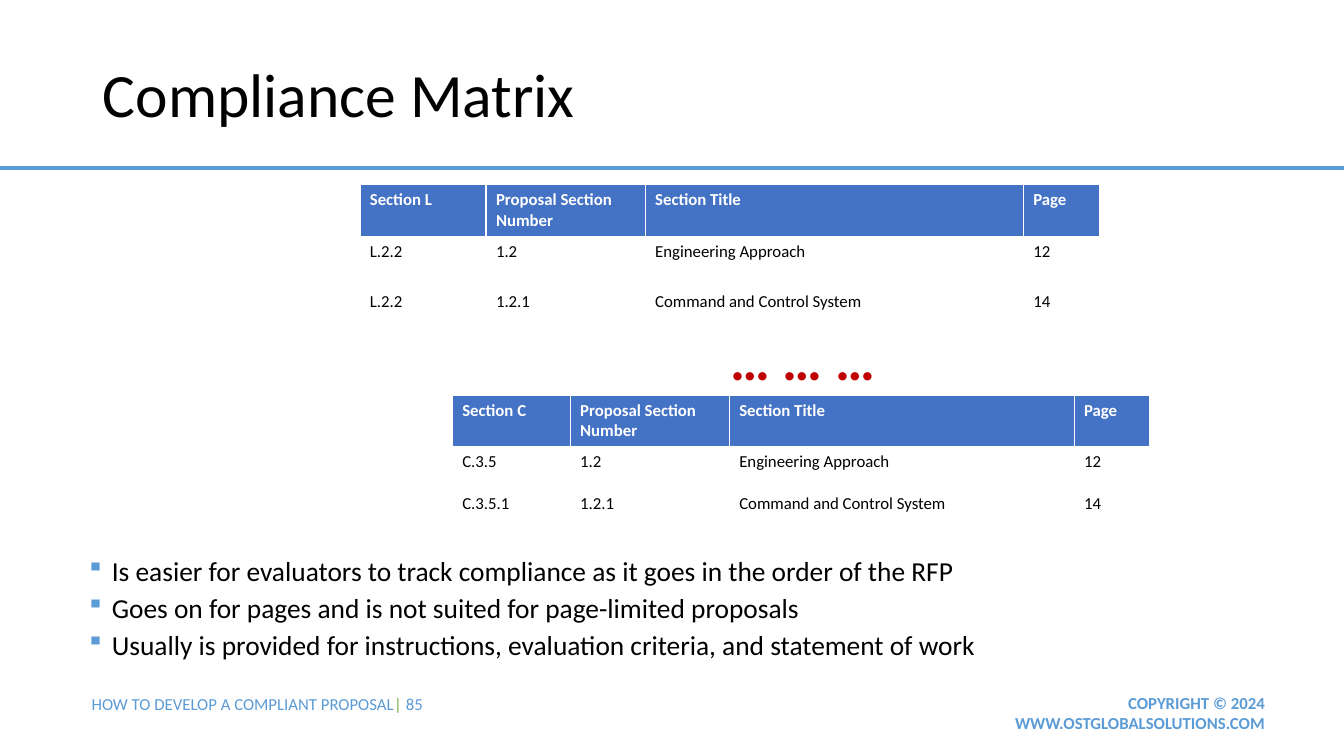
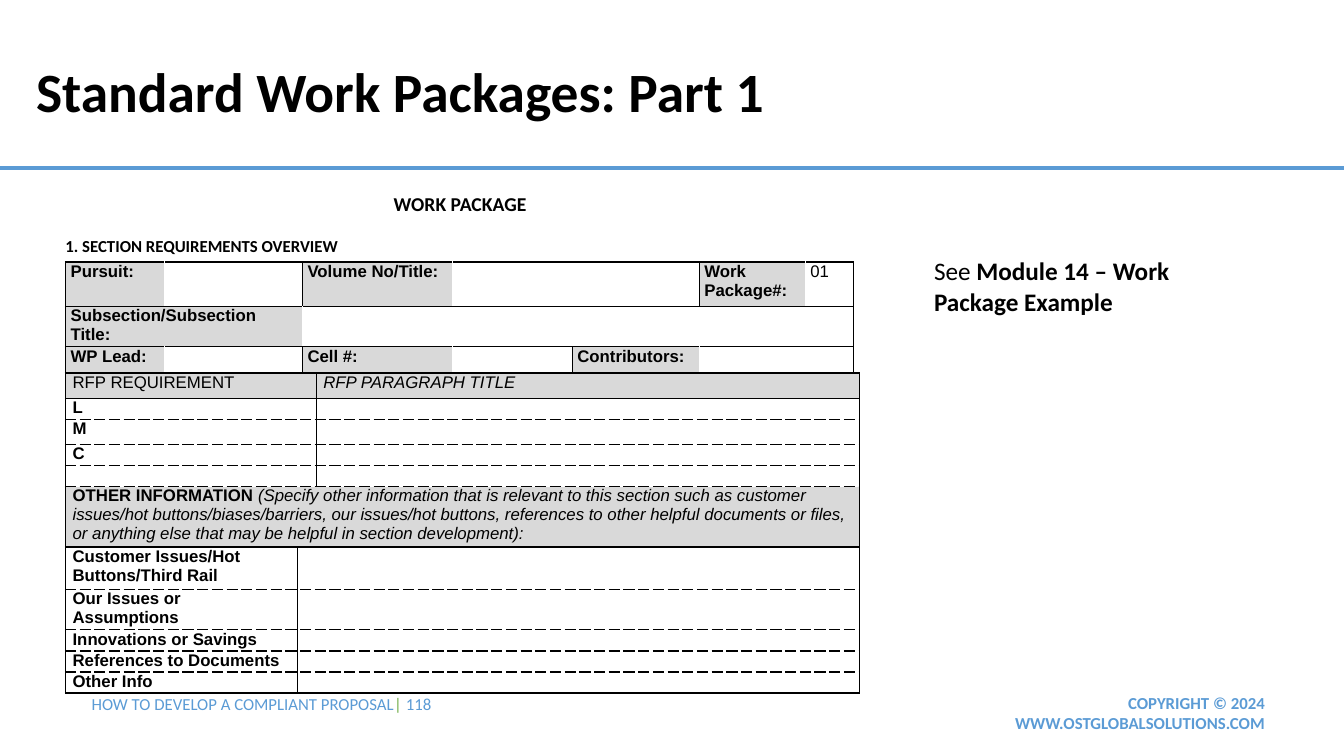
"""Two training slides: a compliance matrix and a work package form."""
from lxml.etree import SubElement
from pptx import Presentation
from pptx.dml.color import RGBColor
from pptx.enum.shapes import MSO_CONNECTOR, MSO_SHAPE
from pptx.enum.text import MSO_ANCHOR, PP_ALIGN
from pptx.oxml.ns import qn
from pptx.util import Cm, Pt

COLORS = {
    "black": "000000", "white": "FFFFFF", "sky": "5B9BD5", "green": "70AD47",
    "header": "4472C4", "red": "C00000", "gray": "D9D9D9",
}
COURSE = "HOW TO DEVELOP A COMPLIANT PROPOSAL"
COPYRIGHT = "COPYRIGHT © 2024 WWW.OSTGLOBALSOLUTIONS.COM"

MATRICES = [
    {
        "place": (9.07, 4.65), "columns": [3.18, 4.01, 9.53, 1.91],
        "heights": [1.3, 1.27, 1.27],
        "rows": [
            ["Section L", "Proposal Section Number", "Section Title", "Page"],
            ["L.2.2", "1.2", "Engineering Approach", "12"],
            ["L.2.2", "1.2.1", "Command and Control System", "14"],
        ],
    },
    {
        "place": (11.4, 9.96), "columns": [2.97, 4.01, 8.69, 1.91],
        "heights": [1.3, 1.04, 1.04],
        "rows": [
            ["Section C", "Proposal Section Number", "Section Title", "Page"],
            ["C.3.5", "1.2", "Engineering Approach", "12"],
            ["C.3.5.1", "1.2.1", "Command and Control System", "14"],
        ],
    },
]
MATRIX_NOTES = [
    "Is easier for evaluators to track compliance as it goes in the order of the RFP",
    "Goes on for pages and is not suited for page-limited proposals",
    "Usually is provided for instructions, evaluation criteria, and statement of work",
]

PACKAGE_COLUMNS = [2.49, 3.48, 3.78, 3.02, 3.2, 2.67, 1.22]
PACKAGE_HEIGHTS = [1.12, 0.97, 0.66]
PACKAGE_FIELDS = [
    [("Pursuit:", 1, "", 1), ("Volume No/Title:", 1, "", 2), ("Work Package#:", 1, "01", 1)],
    [("Subsection/Subsection Title:", 2, "", 5)],
    [("WP Lead:", 1, "", 1), ("Cell #:", 1, "", 1), ("Contributors:", 1, "", 2)],
]
REQUIREMENT_COLUMNS = [5.84, 0.48, 13.69]
REQUIREMENT_HEIGHTS = [0.64, 0.53, 0.63, 0.53, 0.53, 1.47, 1.07, 0.97, 0.53, 0.53, 0.53]
REQUIREMENTS = ["L", "M", "C", ""]
OTHER_INFORMATION = [
    ("OTHER INFORMATION ", {"bold": True}),
    ("(Specify other information that is relevant to this section such as customer "
     "issues/hot buttons/biases/barriers, our issues/hot buttons, references to other "
     "helpful documents or files, or anything else that may be helpful in section "
     "development):", {"italic": True}),
]
INFORMATION_TOPICS = [
    "Customer Issues/Hot Buttons/Third Rail", "Our Issues or Assumptions",
    "Innovations or Savings", "References to Documents", "Other Info",
]


def rgb(color):
    return RGBColor.from_string(COLORS[color])


def write(paragraph, text, *, size=12, color="black", font="Calibri", bold=False,
          italic=False, align=PP_ALIGN.LEFT, spacing=None, before=None, bullet=None):
    """Write a string, or (string, format) runs, into one paragraph."""
    if bullet:
        properties = paragraph._p.get_or_add_pPr()
        properties.set("marL", str(Cm(0.64)))
        properties.set("indent", str(-Cm(0.64)))
        tint = SubElement(properties, qn("a:buClr"))
        SubElement(tint, qn("a:srgbClr"), val=COLORS["sky"])
        SubElement(properties, qn("a:buSzPct"), val="90000")
        SubElement(properties, qn("a:buChar"), char=bullet)
    paragraph.alignment = align
    if spacing:
        paragraph.line_spacing = spacing
    if before:
        paragraph.space_before = Pt(before)
    base = {"size": size, "color": color, "bold": bold, "italic": italic}
    for words, changes in [(text, {})] if isinstance(text, str) else text:
        if not words:
            SubElement(paragraph._p, qn("a:endParaRPr"), sz=str(size * 100))
            continue
        look = {**base, **changes}
        run = paragraph.add_run()
        run.text = words
        run.font.name = font
        run.font.size = Pt(look["size"])
        run.font.bold = look["bold"]
        run.font.italic = look["italic"]
        run.font.color.rgb = rgb(look["color"])


def add_text(slide, place, paragraphs, anchor=MSO_ANCHOR.TOP, before=None, **style):
    frame = slide.shapes.add_textbox(*map(Cm, place)).text_frame
    frame.word_wrap = True
    frame.vertical_anchor = anchor
    for index, text in enumerate(paragraphs):
        paragraph = frame.add_paragraph() if index else frame.paragraphs[0]
        write(paragraph, text, before=before if index else None, **style)


def add_slide(deck, title, place, number, **title_style):
    slide = deck.slides.add_slide(deck.slide_layouts[6])
    rule = slide.shapes.add_connector(
        MSO_CONNECTOR.STRAIGHT, 0, Cm(4.24), deck.slide_width, Cm(4.24))
    rule.line.color.rgb = rgb("sky")
    rule.line.width = Pt(3)
    SubElement(rule._element.spPr, qn("a:effectLst"))
    add_text(slide, (25.2, 17.32, 6.93, 1.27), [COPYRIGHT],
             color="sky", bold=True, align=PP_ALIGN.RIGHT)
    footer = [(COURSE, {}), ("| ", {"color": "green"}), (str(number), {})]
    add_text(slide, (2.06, 17.35, 12.24, 0.76), [footer], color="sky")
    add_text(slide, place, [title], anchor=MSO_ANCHOR.MIDDLE, spacing=0.9, **title_style)
    return slide


def entry(text="", span=1, fill=None, solid="", dashed="", line="black", **style):
    return {"text": text, "span": span, "fill": fill, "solid": solid,
            "dashed": dashed, "line": line, "style": style}


def draw_borders(cell, solid, dashed, color):
    properties = cell._tc.get_or_add_tcPr()
    for side in "lrtb":
        if side in solid + dashed:
            border = SubElement(properties, qn(f"a:ln{side.upper()}"), w=str(Pt(1)))
            paint = SubElement(border, qn("a:solidFill"))
            SubElement(paint, qn("a:srgbClr"), val=COLORS[color])
            SubElement(border, qn("a:prstDash"), val="dash" if side in dashed else "solid")


def add_grid(slide, place, columns, heights, rows, margins=(0.25, 0.13)):
    grid = slide.shapes.add_table(
        len(heights), len(columns), *map(Cm, place), Cm(sum(columns)), Cm(sum(heights))).table
    grid.first_row = grid.horz_banding = False
    for column, width in zip(grid.columns, columns):
        column.width = Cm(width)
    for row, height in zip(grid.rows, heights):
        row.height = Cm(height)
    for row_index, entries in enumerate(rows):
        start = 0
        for item in entries:
            end = start + item["span"]
            cells = [grid.cell(row_index, index) for index in range(start, end)]
            for cell in cells:
                draw_borders(cell, item["solid"], item["dashed"], item["line"])
                cell.margin_left = cell.margin_right = Cm(margins[0])
                cell.margin_top = cell.margin_bottom = Cm(margins[1])
                if item["fill"]:
                    cell.fill.solid()
                    cell.fill.fore_color.rgb = rgb(item["fill"])
                else:
                    cell.fill.background()
            if len(cells) > 1:
                cells[0].merge(cells[-1])
            write(cells[0].text_frame.paragraphs[0], item["text"], **item["style"])
            start = end


def matrix_rows(rows):
    header, *body = rows
    return [
        [entry(text, fill="header", solid="lrtb", line="white", color="white", bold=True)
         for text in header],
        *[[entry(text, solid="lrtb", line="white") for text in row] for row in body],
    ]


def package_rows():
    rows = []
    for fields in PACKAGE_FIELDS:
        row = []
        for label, label_span, value, value_span in fields:
            row += [
                entry(label, label_span, "gray", "ltb", font="Arial", bold=True),
                entry(value, value_span, solid="rtb", font="Arial"),
            ]
        rows.append(row)
    return rows


def dashed_rows(labels, spans, closed):
    rows = []
    for index, label in enumerate(labels):
        last = closed and index == len(labels) - 1
        solid = "lr" + "t" * (index == 0) + "b" * last
        edges = {"solid": solid, "dashed": "".join(side for side in "tb" if side not in solid)}
        rows.append([entry(label, spans[0], font="Arial", bold=True, **edges),
                     entry("", spans[1], **edges)])
    return rows


def requirement_rows():
    band = {"fill": "gray", "font": "Arial"}
    return [
        [entry("RFP REQUIREMENT", 2, solid="lrtb", **band),
         entry("RFP PARAGRAPH TITLE", solid="lrtb", italic=True, **band)],
        *dashed_rows(REQUIREMENTS, (2, 1), closed=False),
        [entry(OTHER_INFORMATION, 3, solid="lrb", dashed="t", **band)],
        *dashed_rows(INFORMATION_TOPICS, (1, 2), closed=True),
    ]


def build_matrix_slide(deck):
    slide = add_slide(deck, "Compliance Matrix", (2.34, 1.02, 20.04, 2.9), 85, size=44)
    add_text(slide, (1.93, 14.07, 23.67, 4.19), MATRIX_NOTES,
             size=19.6, spacing=0.7, before=10, bullet="▪")
    for matrix in MATRICES:
        add_grid(slide, matrix["place"], matrix["columns"], matrix["heights"],
                 matrix_rows(matrix["rows"]))
    add_text(slide, (18.16, 8.05, 5.92, 1.96), ["… … …"], size=40, color="red", bold=True)


def build_package_slide(deck):
    slide = add_slide(deck, "Standard Work Packages: Part 1", (0.66, 1.55, 24.56, 1.68), 118,
                      size=39.6, bold=True)
    add_grid(slide, (1.65, 6.6), PACKAGE_COLUMNS, PACKAGE_HEIGHTS, package_rows(), (0.13, 0))
    add_grid(slide, (1.65, 9.4), REQUIREMENT_COLUMNS, REQUIREMENT_HEIGHTS,
             requirement_rows(), (0.18, 0))
    heading = slide.shapes.add_shape(
        MSO_SHAPE.RECTANGLE, Cm(1.65), Cm(4.39), Cm(19.89), Cm(2.16))
    heading.shadow.inherit = False
    heading.fill.solid()
    heading.fill.fore_color.rgb = rgb("white")
    heading.line.fill.background()
    frame = heading.text_frame
    frame.word_wrap = True
    frame.vertical_anchor = MSO_ANCHOR.MIDDLE
    frame.margin_left = frame.margin_right = 0
    frame.margin_top, frame.margin_bottom = Cm(0.43), Cm(0.1)
    write(frame.paragraphs[0], "WORK PACKAGE", size=14, bold=True, align=PP_ALIGN.CENTER)
    write(frame.add_paragraph(), "1. SECTION REQUIREMENTS OVERVIEW", bold=True, before=14.6)
    reference = [("See ", {}), ("Module 14 – Work Package Example", {"bold": True})]
    add_text(slide, (23.29, 6.32, 8.51, 1.8), [reference], size=18)


def main():
    deck = Presentation()
    deck.slide_width, deck.slide_height = Cm(33.87), Cm(19.05)
    build_matrix_slide(deck)
    build_package_slide(deck)
    deck.save("out.pptx")


if __name__ == "__main__":
    main()
